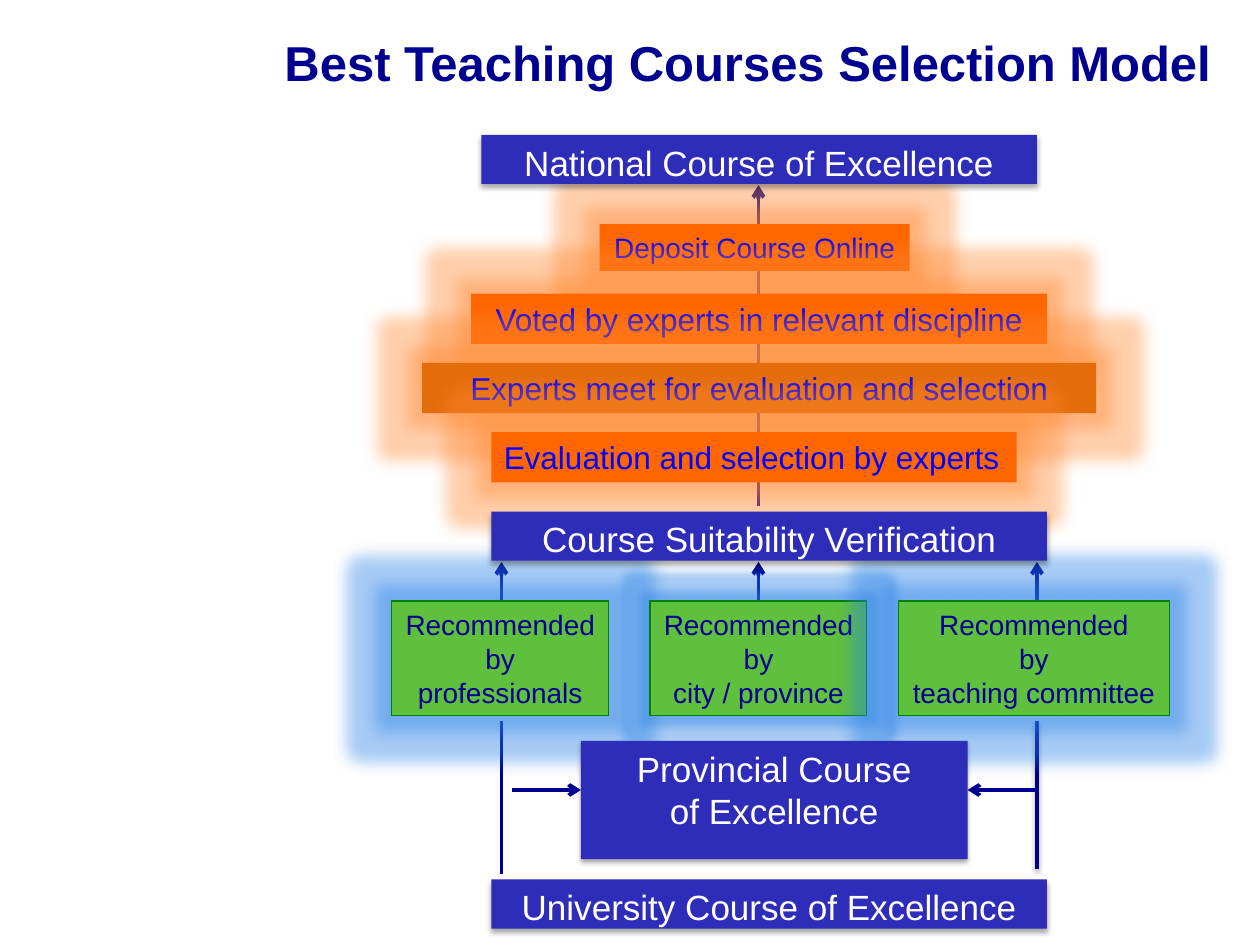
from pptx import Presentation
from pptx.dml.color import RGBColor
from pptx.enum.shapes import MSO_CONNECTOR as Conn, MSO_SHAPE as Shape
from pptx.enum.text import MSO_ANCHOR as Anchor, PP_ALIGN as Align
from pptx.oxml import parse_xml
from pptx.oxml.ns import nsdecls
from pptx.util import Inches, Pt

NAVY = RGBColor(0x00, 0x00, 0x90)
BLUE = RGBColor(0x00, 0x00, 0xFF)
INDIGO = RGBColor(0x2D, 0x2D, 0xB9)
WHITE = RGBColor(0xFF, 0xFF, 0xFF)
ORANGE = RGBColor(0xFF, 0x66, 0x00)
DARK_ORANGE = RGBColor(0xE4, 0x6C, 0x0A)
GREEN = RGBColor(0x5F, 0xC0, 0x3E)
DARK_GREEN = RGBColor(0x00, 0x80, 0x00)
ORANGE_GLOW = RGBColor(0xFF, 0x88, 0x30)
BLUE_GLOW = RGBColor(0x25, 0x7F, 0xE6)

TITLE = "Best Teaching Courses Selection Model"
LEFT, MID, RIGHT = 3.98, 6.02, 8.23
STEP_TOP, STEP_PITCH = 1.78, 0.55
SOURCE_TOP, SOURCE_H = 4.77, 0.91
SIDE_Y = 6.27

STAGES = [
    ("National Course of Excellence", 3.82, 1.07, 4.41, 0.39),
    ("Course Suitability Verification", 3.9, 4.06, 4.41, 0.39),
    ("Provincial Course\nof Excellence", 4.61, 5.88, 3.07, 0.94),
    ("University Course of Excellence", 3.9, 6.98, 4.41, 0.39),
]
STEPS = [
    ("Deposit Course Online", 4.76, 2.46, 0.37, 16, ORANGE, Align.CENTER),
    ("Voted by experts in relevant discipline", 3.74, 4.57, 0.4, 18, ORANGE, Align.CENTER),
    ("Experts meet for evaluation and selection", 3.35, 5.35, 0.4, 18, DARK_ORANGE, Align.CENTER),
    ("Evaluation and selection by experts", 3.9, 4.17, 0.4, 18, ORANGE, Align.LEFT),
]
SOURCES = [
    ("professionals", 3.11, 1.72, 18),
    ("city / province", 5.16, 1.72, 11),
    ("teaching committee", 7.13, 2.15, 18),
]
ARROWS = [(MID, 1.86, MID, 1.47)]
ARROWS += [(x, 4.85, x, 4.46) for x in (LEFT, MID, RIGHT)]
ARROWS += [(4.06, SIDE_Y, 4.61, SIDE_Y), (RIGHT, SIDE_Y, 7.68, SIDE_Y)]
LINKS = [(MID, 2.1 + i * STEP_PITCH, MID, 2.37 + i * STEP_PITCH) for i in range(4)]
LINKS += [(LEFT, 5.72, LEFT, 6.94)]
SHADED_LINKS = [(RIGHT, 5.72, RIGHT, 6.9)]

SHADOW = ('<a:outerShdw blurRad="39370" dist="22860" dir="5400000" rotWithShape="0">'
          '<a:srgbClr val="000000"><a:alpha val="35000"/></a:srgbClr></a:outerShdw>')


def glow(color, points):
    return (f'<a:glow rad="{Pt(points)}"><a:srgbClr val="{color}">'
            '<a:alpha val="40000"/></a:srgbClr></a:glow>')


def add_effect(s, effect=""):
    s._element.spPr.append(parse_xml(f'<a:effectLst {nsdecls("a")}>{effect}</a:effectLst>'))


def add_line(slide, ends, arrow=False, effect=""):
    s = slide.shapes.add_connector(Conn.STRAIGHT, *(Inches(v) for v in ends))
    s.line.color.rgb = NAVY
    s.line.width = Pt(2.25)
    if arrow:
        s.line._get_or_add_ln().append(parse_xml(f'<a:tailEnd {nsdecls("a")} type="arrow"/>'))
    add_effect(s, effect)


def write(s, text, size, color, align=Align.CENTER, anchor=Anchor.MIDDLE, bold=False):
    tf = s.text_frame
    tf.word_wrap = True
    tf.vertical_anchor = anchor
    tf.text = text
    for p in tf.paragraphs:
        p.alignment = align
        p.font.name = "Arial"
        p.font.size = Pt(size)
        p.font.bold = bold
        p.font.color.rgb = color


def add_box(slide, at, fill, effect, border=None):
    s = slide.shapes.add_shape(Shape.RECTANGLE, *(Inches(v) for v in at))
    s.fill.solid()
    s.fill.fore_color.rgb = fill
    if border is None:
        s.line.fill.background()
    else:
        s.line.color.rgb = border
        s.line.width = Pt(0.75)
    add_effect(s, effect)
    return s


def main():
    prs = Presentation()
    prs.slide_width, prs.slide_height = Inches(10), Inches(7.5)
    slide = prs.slides.add_slide(prs.slide_layouts[6])

    for ends in LINKS:
        add_line(slide, ends)
    for ends in SHADED_LINKS:
        add_line(slide, ends, effect=SHADOW)
    for ends in ARROWS:
        add_line(slide, ends, arrow=True)

    for i, (text, x, w, h, size, fill, align) in enumerate(STEPS):
        at = (x, STEP_TOP + i * STEP_PITCH, w, h)
        s = add_box(slide, at, fill, glow(ORANGE_GLOW, 18))
        write(s, text, size, BLUE, align)

    for name, x, w, radius in SOURCES:
        at = (x, SOURCE_TOP, w, SOURCE_H)
        s = add_box(slide, at, GREEN, glow(BLUE_GLOW, radius), DARK_GREEN)
        write(s, f"Recommended\nby\n{name}", 16, NAVY)

    for text, *at in STAGES:
        s = add_box(slide, at, INDIGO, SHADOW)
        write(s, text, 20, WHITE, anchor=Anchor.TOP)

    title = slide.shapes.add_textbox(Inches(2.16), Inches(0.21), Inches(7.64), Inches(0.57))
    write(title, TITLE, 28, NAVY, Align.LEFT, Anchor.TOP, True)

    prs.save("out.pptx")


if __name__ == "__main__":
    main()
